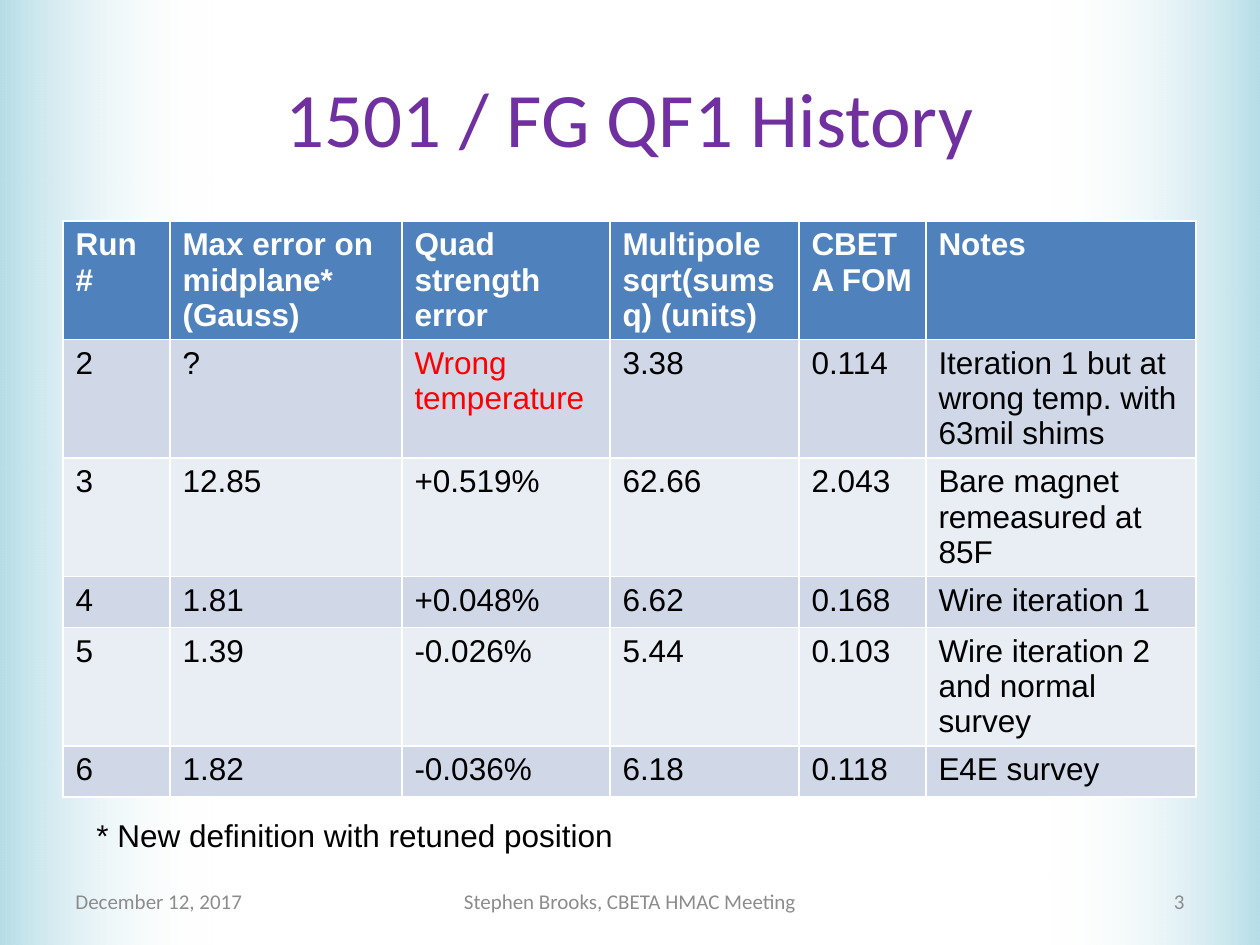
from pptx import Presentation
from pptx.dml.color import RGBColor
from pptx.enum.shapes import MSO_SHAPE
from pptx.enum.text import MSO_ANCHOR, PP_ALIGN
from pptx.oxml.ns import qn
from pptx.util import Emu, Pt
from lxml import etree

RECTANGLE = MSO_SHAPE.RECTANGLE
TOP, MIDDLE = MSO_ANCHOR.TOP, MSO_ANCHOR.MIDDLE
LEFT, CENTER, RIGHT = PP_ALIGN.LEFT, PP_ALIGN.CENTER, PP_ALIGN.RIGHT

EMU_PER_PX = 914400 / 126
SLIDE_W, SLIDE_H = 1260, 945

COLORS = {
    "edge": "B7DEE8",
    "white": "FFFFFF",
    "title": "7030A0",
    "header": "4F81BD",
    "odd_row": "D0D8E8",
    "even_row": "E9EDF4",
    "text": "000000",
    "warning": "FF0000",
    "footer": "8C8C8C",
}

TITLE_FONT = {"name": "Calibri", "size": Pt(44)}
TABLE_FONT = {"name": "Arial", "size": Pt(18), "bold": False}
HEADER_FONT = {**TABLE_FONT, "bold": True}
FOOTER_FONT = {"name": "Calibri", "size": Pt(12)}

COLUMN_WIDTHS = [107, 232, 208, 189, 127, 270]
ROW_HEIGHT = 51
HEADINGS = ["Run #", "Max error on midplane* (Gauss)", "Quad strength error",
            "Multipole sqrt(sumsq) (units)", "CBETA FOM", "Notes"]
RUNS = [
    ["2", "?", "Wrong temperature", "3.38", "0.114",
     "Iteration 1 but at wrong temp. with 63mil shims"],
    ["3", "12.85", "+0.519%", "62.66", "2.043", "Bare magnet remeasured at 85F"],
    ["4", "1.81", "+0.048%", "6.62", "0.168", "Wire iteration 1"],
    ["5", "1.39", "-0.026%", "5.44", "0.103", "Wire iteration 2 and normal survey"],
    ["6", "1.82", "-0.036%", "6.18", "0.118", "E4E survey"],
]


def px(length):
    return Emu(round(length * EMU_PER_PX))


def rgb(color):
    return RGBColor.from_string(COLORS[color])


def write(frame, text, font_format, color, align=LEFT):
    paragraph = frame.paragraphs[0]
    paragraph.alignment = align
    run = paragraph.add_run()
    run.text = text
    for attribute, value in font_format.items():
        setattr(run.font, attribute, value)
    run.font.color.rgb = rgb(color)


def add_label(slide, box, text, font_format, color, align=LEFT, anchor=TOP, wrap=True):
    label = slide.shapes.add_textbox(*map(px, box))
    label.text_frame.word_wrap = wrap
    label.text_frame.vertical_anchor = anchor
    write(label.text_frame, text, font_format, color, align)


def add_edge_fade(slide, box, rotation):
    fade = slide.shapes.add_shape(RECTANGLE, *map(px, box))
    fade.rotation = rotation
    fade.shadow.inherit = False
    fade.line.fill.background()
    fade.fill.gradient()
    fade.fill.gradient_angle = 0
    for stop, color in zip(fade.fill.gradient_stops, ("edge", "white")):
        stop.color.rgb = rgb(color)
    inner_color = fade._element.spPr.findall(".//" + qn("a:srgbClr"))[-1]
    etree.SubElement(inner_color, qn("a:alpha"), val="0")
    slide.shapes._spTree.insert(2, fade._element)


def add_title(slide, box, text):
    title = slide.shapes.title
    title.left, title.top, title.width, title.height = map(px, box)
    title.text_frame.vertical_anchor = MIDDLE
    write(title.text_frame, text, TITLE_FONT, "title", CENTER)


def add_history_table(slide, box):
    rows = [HEADINGS, *RUNS]
    table = slide.shapes.add_table(len(rows), len(HEADINGS), *map(px, box)).table
    for column, width in zip(table.columns, COLUMN_WIDTHS):
        column.width = px(width)
    for r, values in enumerate(rows):
        table.rows[r].height = px(ROW_HEIGHT)
        fill = "header" if r == 0 else "odd_row" if r % 2 else "even_row"
        for c, value in enumerate(values):
            cell = table.cell(r, c)
            cell.fill.solid()
            cell.fill.fore_color.rgb = rgb(fill)
            if r == 0:
                write(cell.text_frame, value, HEADER_FONT, "white")
            else:
                color = "warning" if value.startswith("Wrong") else "text"
                write(cell.text_frame, value, TABLE_FONT, color)


def add_footer(slide, box):
    left, top, width, height = box
    side, middle = 294, 400
    parts = [
        (0, side, "December 12, 2017", LEFT),
        ((width - middle) // 2, middle, "Stephen Brooks, CBETA HMAC Meeting", CENTER),
        (width - side, side, "3", RIGHT),
    ]
    for offset, part_width, text, align in parts:
        add_label(slide, (left + offset, top, part_width, height), text,
                  FOOTER_FONT, "footer", align, MIDDLE)


def main():
    deck = Presentation()
    deck.slide_width, deck.slide_height = px(SLIDE_W), px(SLIDE_H)
    slide = deck.slides.add_slide(deck.slide_layouts[5])
    fade_width = 213
    add_edge_fade(slide, (0, 0, fade_width, SLIDE_H), 0)
    add_edge_fade(slide, (SLIDE_W - fade_width, 0, fade_width, SLIDE_H), 180)
    add_title(slide, (63, 38, 1134, 158), "1501 / FG QF1 History")
    add_history_table(slide, (63, 221, sum(COLUMN_WIDTHS), ROW_HEIGHT * (len(RUNS) + 1)))
    add_footer(slide, (63, 876, 1134, 50))
    add_label(slide, (84, 810, 547, 50), "* New definition with retuned position",
              TABLE_FONT, "text", wrap=False)
    deck.save("out.pptx")


if __name__ == "__main__":
    main()
